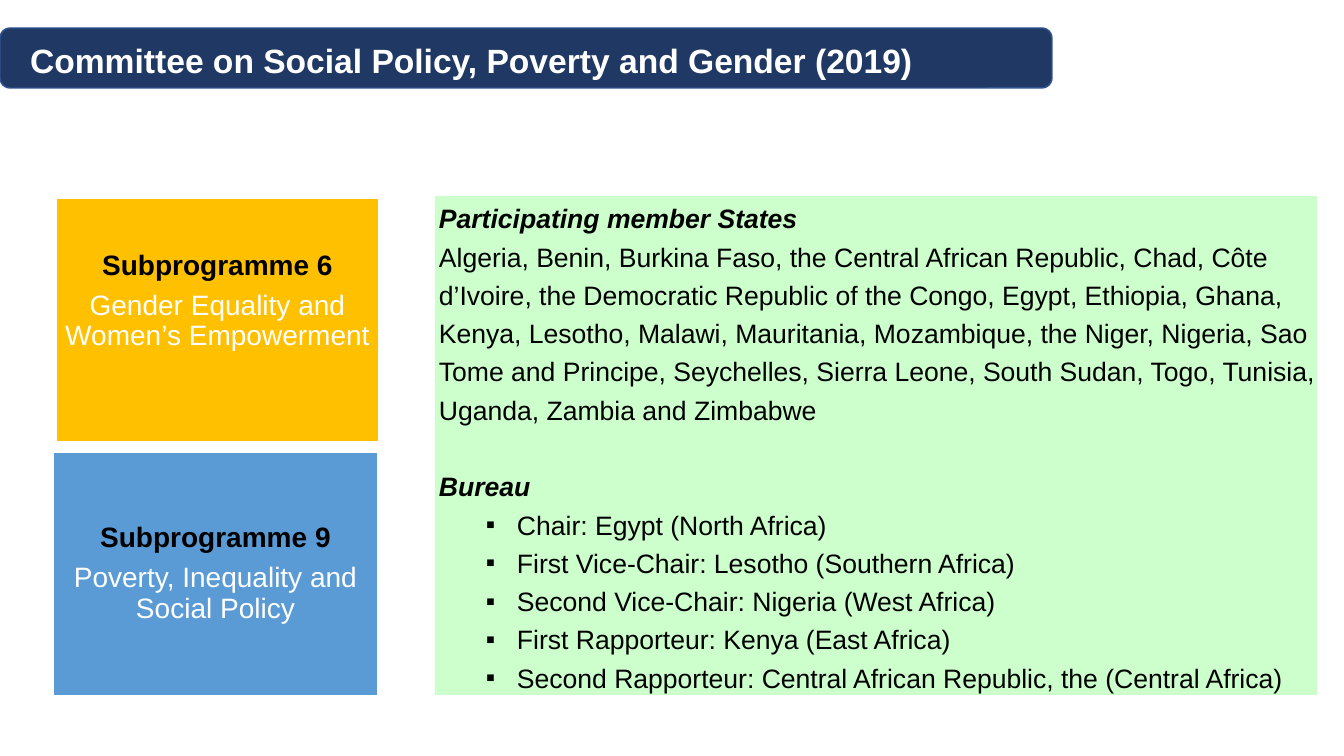
from pptx import Presentation
from pptx.dml.color import RGBColor
from pptx.enum.shapes import MSO_SHAPE as Shape
from pptx.enum.text import MSO_ANCHOR as Anchor, MSO_AUTO_SIZE as AutoSize, PP_ALIGN as Align
from pptx.oxml.ns import qn
from pptx.util import Emu, Pt
from lxml.etree import SubElement

THEME = {
    "font": "Arial",
    "white": "FFFFFF", "black": "000000",
    "navy": "203864", "navy line": "325491",
    "gold": "FFC000", "blue": "5B9BD5", "green": "CCFFCC",
    "title size": 24, "box size": 20, "body size": 19,
}
EMU_PER_PX = 914400 / 100.8


def px(*lengths):
    return [Emu(round(length * EMU_PER_PX)) for length in lengths]


def set_font(paragraph, size, color, bold=False, italic=False):
    font = paragraph.font
    font.name, font.size = THEME["font"], Pt(THEME[size])
    font.bold, font.italic = bold, italic
    font.color.rgb = RGBColor.from_string(THEME[color])


presentation = Presentation()
presentation.slide_width, presentation.slide_height = px(1344, 756)
slide = presentation.slides.add_slide(presentation.slide_layouts[1])
title, body = slide.placeholders

# Title bar and subprogramme boxes: bounds, fill, line
bar, gender_box, poverty_box = [
    slide.shapes.add_shape(kind, *px(*bounds)) for kind, bounds in (
        (Shape.ROUNDED_RECTANGLE, (0, 28, 1052, 60)),
        (Shape.RECTANGLE, (56, 198, 323, 244)),
        (Shape.RECTANGLE, (53, 452, 325, 244)),
    )
]
for shape, fill, line in ((bar, "navy", "navy line"),
                          (gender_box, "gold", "white"),
                          (poverty_box, "blue", "white")):
    shape.shadow.inherit = False
    shape.fill.solid()
    shape.fill.fore_color.rgb = RGBColor.from_string(THEME[fill])
    shape.line.color.rgb = RGBColor.from_string(THEME[line])
    shape.line.width = Pt(1)
title.element.addprevious(bar.element)

# Title
title.left, title.top, title.width, title.height = px(20, 35, 914, 91)
title.text_frame.text = "Committee on Social Policy, Poverty and Gender (2019)"
title.text_frame.vertical_anchor = Anchor.TOP
title.text_frame.auto_size = AutoSize.NONE
heading = title.text_frame.paragraphs[0]
heading.alignment = Align.LEFT
set_font(heading, "title size", "white", bold=True)

# Subprogramme texts; the gender text sits above the middle of its box
for box, name, topic, bottom_margin in (
    (gender_box, "Subprogramme 6", "Gender Equality and Women’s Empowerment", 43),
    (poverty_box, "Subprogramme 9", "Poverty, Inequality and Social Policy", 6),
):
    frame = box.text_frame
    frame.word_wrap = True
    frame.vertical_anchor = Anchor.MIDDLE
    (frame.margin_left, frame.margin_top,
     frame.margin_right, frame.margin_bottom) = px(6, 6, 6, bottom_margin)
    frame.text = f"{name}\n{topic}"
    for paragraph, color in zip(frame.paragraphs, ("black", "white")):
        paragraph.alignment = Align.CENTER
        paragraph.line_spacing = 0.9
        paragraph.space_after = Pt(7)
        set_font(paragraph, "box size", color, bold=color == "black")

# Member States and bureau
body.left, body.top, body.width, body.height = px(435, 196, 882, 499)
body.fill.solid()
body.fill.fore_color.rgb = RGBColor.from_string(THEME["green"])
frame = body.text_frame
frame.auto_size = AutoSize.NONE
frame.margin_left = frame.margin_top = frame.margin_right = frame.margin_bottom = 0
entries = (
    ("heading", "Participating member States"),
    ("text", "Algeria, Benin, Burkina Faso, the Central African Republic, Chad, Côte d’Ivoire, "
             "the Democratic Republic of the Congo, Egypt, Ethiopia, Ghana, Kenya, Lesotho, "
             "Malawi, Mauritania, Mozambique, the Niger, Nigeria, Sao Tome and Principe, "
             "Seychelles, Sierra Leone, South Sudan, Togo, Tunisia, Uganda, Zambia and Zimbabwe"),
    ("heading", "Bureau"),
    ("bullet", "Chair: Egypt (North Africa)"),
    ("bullet", "First Vice-Chair: Lesotho (Southern Africa)"),
    ("bullet", "Second Vice-Chair: Nigeria (West Africa)"),
    ("bullet", "First Rapporteur: Kenya (East Africa)"),
    ("bullet", "Second Rapporteur: Central African Republic, the (Central Africa)"),
)
frame.text = "\n".join(text for role, text in entries)
for paragraph, (role, text) in zip(frame.paragraphs, entries):
    properties = paragraph._p.get_or_add_pPr()
    margin, indent = px(82, -31) if role == "bullet" else px(4, 0)
    properties.set("marL", str(margin))
    properties.set("indent", str(indent))
    if role == "bullet":
        paragraph.level = 1
        SubElement(properties, qn("a:buFont")).set("typeface", THEME["font"])
        SubElement(properties, qn("a:buChar")).set("char", "▪")
    else:
        SubElement(properties, qn("a:buNone"))
    paragraph.line_spacing = 1.2
    paragraph.space_before = Pt(27.4 if text == "Bureau" else 0)
    set_font(paragraph, "body size", "black", role == "heading", role == "heading")

presentation.save("out.pptx")
